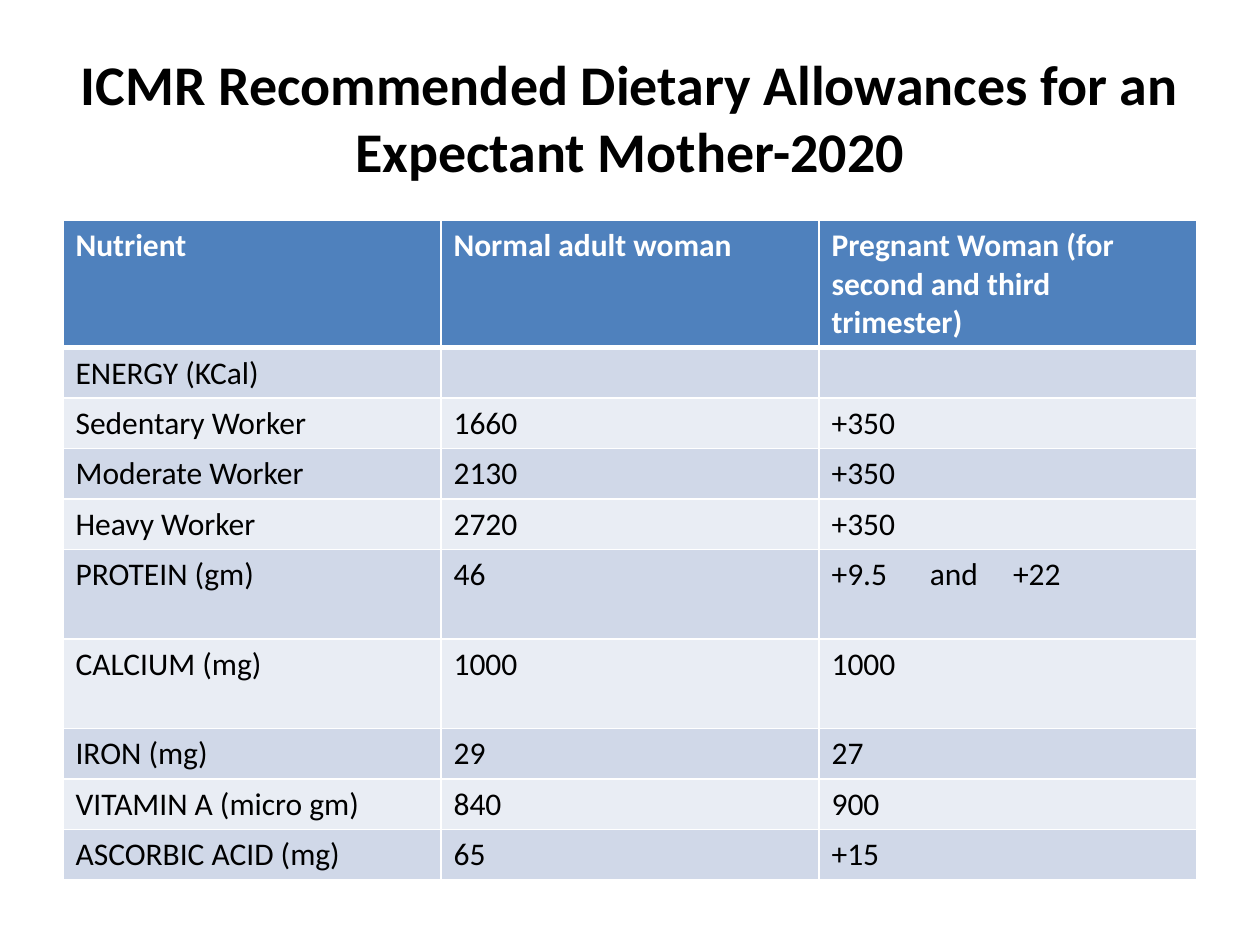
"""Build a slide with a table of recommended dietary allowances in pregnancy."""
import pptx
import pptx.dml.color
import pptx.enum.text
import pptx.oxml
import pptx.oxml.ns
import pptx.util

BLACK = pptx.dml.color.RGBColor(0x00, 0x00, 0x00)
WHITE = pptx.dml.color.RGBColor(0xFF, 0xFF, 0xFF)
HEADER_BLUE = pptx.dml.color.RGBColor(0x4F, 0x81, 0xBD)
BAND_FILLS = (
    pptx.dml.color.RGBColor(0xE9, 0xED, 0xF4),
    pptx.dml.color.RGBColor(0xD0, 0xD8, 0xE8),
)
FONT = "Calibri"
SLIDE_WIDTH = pptx.util.Inches(10)
SLIDE_HEIGHT = pptx.util.Inches(7.5)
MARGIN = int(SLIDE_WIDTH * 0.05)
CONTENT_WIDTH = SLIDE_WIDTH - 2 * MARGIN

TITLE = "ICMR Recommended Dietary Allowances for an Expectant Mother-2020"
HEADER_HEIGHT, ROW_HEIGHT, TALL_HEIGHT = 1.01, 0.4, 0.71
ALLOWANCES = [
    (HEADER_HEIGHT, "Nutrient", "Normal adult woman",
     "Pregnant Woman (for second and third trimester)"),
    (ROW_HEIGHT, "ENERGY (KCal)", "", ""),
    (ROW_HEIGHT, "Sedentary Worker", "1660", "+350"),
    (ROW_HEIGHT, "Moderate Worker", "2130", "+350"),
    (ROW_HEIGHT, "Heavy Worker", "2720", "+350"),
    (TALL_HEIGHT, "PROTEIN (gm)", "46", "+9.5\tand\t+22"),
    (TALL_HEIGHT, "CALCIUM (mg)", "1000", "1000"),
    (ROW_HEIGHT, "IRON (mg)", "29", "27"),
    (ROW_HEIGHT, "VITAMIN A (micro gm)", "840", "900"),
    (ROW_HEIGHT, "ASCORBIC ACID (mg)", "65", "+15"),
]
TAB_STOPS = (0.78, 1.44)


def add_span(para, text, size, color, bold):
    """Add one formatted run to a paragraph."""
    span = para.add_run()
    span.text = text
    span.font.name = FONT
    span.font.size = pptx.util.Pt(size)
    span.font.bold = bold
    span.font.color.rgb = color


def add_title(page):
    """Add the centred slide title."""
    box = page.shapes.add_textbox(
        MARGIN, int(SLIDE_HEIGHT * 0.04), CONTENT_WIDTH, pptx.util.Inches(1.25))
    frame = box.text_frame
    frame.word_wrap = True
    frame.vertical_anchor = pptx.enum.text.MSO_ANCHOR.MIDDLE
    para = frame.paragraphs[0]
    para.alignment = pptx.enum.text.PP_ALIGN.CENTER
    add_span(para, TITLE, 32, BLACK, True)


def set_borders(cell, bottom_width):
    """Draw white lines round a cell, with a chosen width at the bottom."""
    properties = cell._tc.get_or_add_tcPr()
    for side, width in (("L", 1), ("R", 1), ("T", 1), ("B", bottom_width)):
        properties.append(pptx.oxml.parse_xml(
            f'<a:ln{side} {pptx.oxml.ns.nsdecls("a")} w="{pptx.util.Pt(width)}">'
            f'<a:solidFill><a:srgbClr val="{WHITE}"/></a:solidFill></a:ln{side}>'))


def set_tab_stops(para):
    """Give a paragraph left-aligned tab stops."""
    stops = "".join(
        f'<a:tab pos="{pptx.util.Inches(stop)}" algn="l"/>' for stop in TAB_STOPS)
    para._p.get_or_add_pPr().append(pptx.oxml.parse_xml(
        f'<a:tabLst {pptx.oxml.ns.nsdecls("a")}>{stops}</a:tabLst>'))


def fill_cell(cell, text, row_index):
    """Style one cell by its row and write its text."""
    is_header = row_index == 0
    set_borders(cell, 3 if is_header else 1)
    cell.fill.solid()
    cell.fill.fore_color.rgb = HEADER_BLUE if is_header else BAND_FILLS[row_index % 2]
    para = cell.text_frame.paragraphs[0]
    if "\t" in text:
        set_tab_stops(para)
    if text:
        add_span(para, text, 18, WHITE if is_header else BLACK, is_header)


def add_allowance_table(page):
    """Add the table of nutrients and allowances."""
    height = pptx.util.Inches(sum(row[0] for row in ALLOWANCES))
    table = page.shapes.add_table(
        len(ALLOWANCES), 3, MARGIN, pptx.util.Inches(1.75), CONTENT_WIDTH, height).table
    for row_index, (row_height, *texts) in enumerate(ALLOWANCES):
        table.rows[row_index].height = pptx.util.Inches(row_height)
        for column_index, text in enumerate(texts):
            fill_cell(table.cell(row_index, column_index), text, row_index)


def main():
    """Create the deck and save it."""
    deck = pptx.Presentation()
    deck.slide_width = SLIDE_WIDTH
    deck.slide_height = SLIDE_HEIGHT
    page = deck.slides.add_slide(deck.slide_layouts[6])
    add_title(page)
    add_allowance_table(page)
    deck.save("out.pptx")


if __name__ == "__main__":
    main()
